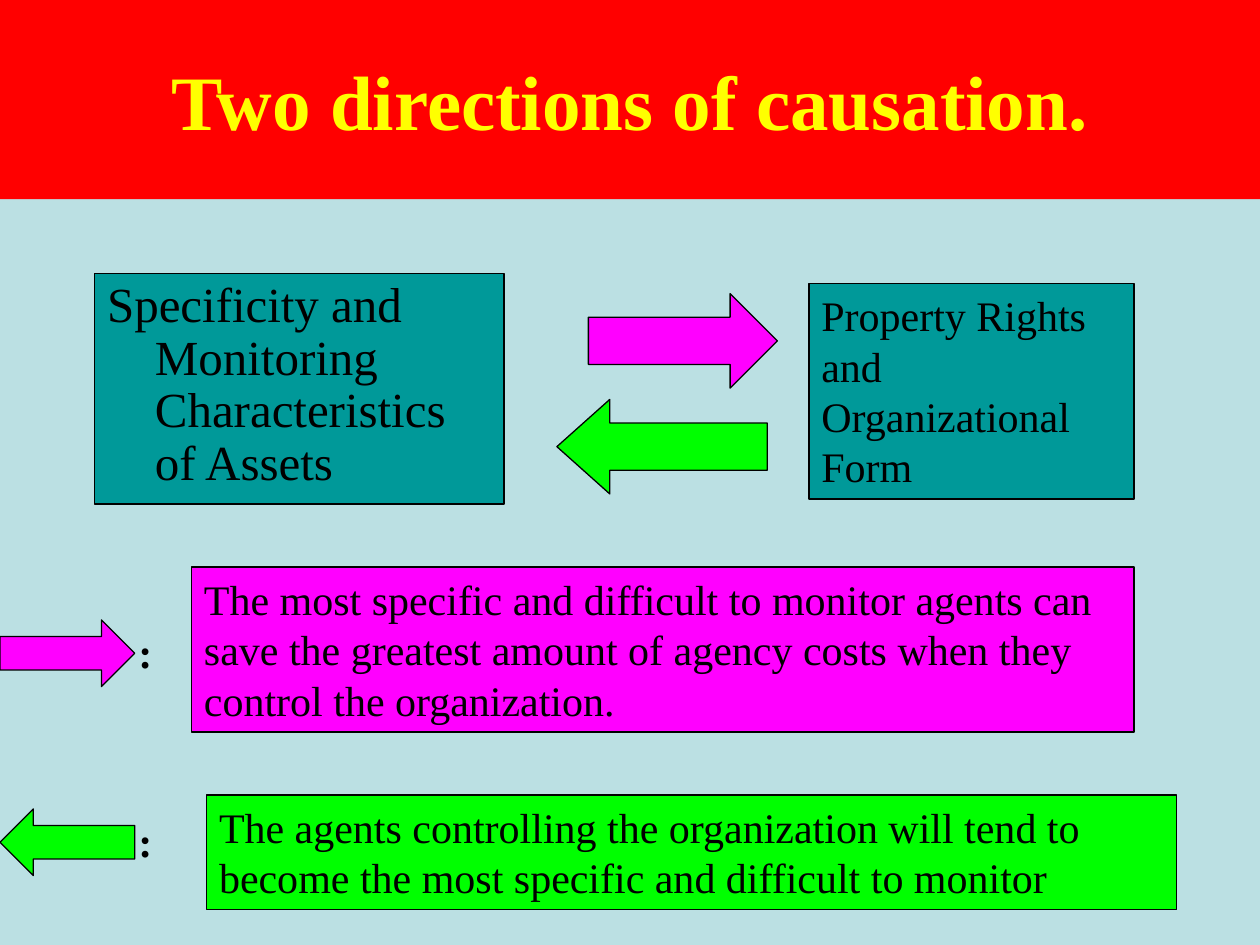
"""Build a slide on the two directions of causation between assets and ownership."""
from dataclasses import dataclass

from pptx import Presentation
from pptx.dml.color import RGBColor
from pptx.enum import shapes, text
from pptx.oxml.ns import qn
from pptx.util import Inches, Pt


@dataclass(frozen=True)
class Theme:
    font: str = "Times New Roman"
    background: str = "BBE0E3"
    banner: str = "FF0000"
    heading: str = "FFFF00"
    ink: str = "000000"
    teal: str = "009999"
    magenta: str = "FF00FF"
    green: str = "00FF00"
    title_size: int = 44
    body_size: int = 28
    note_size: int = 24
    line: float = 0.75


theme = Theme()


def paint(sp, fill, box=None):
    if box:
        sp.left, sp.top, sp.width, sp.height = map(Inches, box)
    sp.fill.solid()
    sp.fill.fore_color.rgb = RGBColor.from_string(fill)
    if fill != theme.banner:
        sp.line.color.rgb = RGBColor.from_string(theme.ink)
        sp.line.width = Pt(theme.line)


def write(sp, lines, size, color=theme.ink, bold=False, align=text.PP_ALIGN.LEFT,
          anchor=text.MSO_ANCHOR.TOP, wrap=True):
    tf = sp.text_frame
    tf.text = "\n".join(lines)
    tf.word_wrap = wrap
    tf.auto_size = text.MSO_AUTO_SIZE.NONE
    tf.vertical_anchor = anchor
    for p in tf.paragraphs:
        p.alignment = align
        p.font.name = theme.font
        p.font.size = Pt(size)
        p.font.bold = bold
        p.font.color.rgb = RGBColor.from_string(color)


prs = Presentation()
prs.slide_width, prs.slide_height = Inches(10), Inches(7.5)
s = prs.slides.add_slide(prs.slide_layouts[1])
s.background.fill.solid()
s.background.fill.fore_color.rgb = RGBColor.from_string(theme.background)

title, body = s.placeholders
paint(title, theme.banner, (0, 0, 10, 1.58))
write(title, ["Two directions of causation."], theme.title_size, theme.heading, True,
      text.PP_ALIGN.CENTER, text.MSO_ANCHOR.MIDDLE)

paint(body, theme.teal, (0.75, 2.17, 3.25, 1.83))
write(body, ["Specificity and Monitoring Characteristics of Assets"], theme.body_size)
p = body.text_frame.paragraphs[0]
p.line_spacing = 0.9
pPr = p._p.get_or_add_pPr()
pPr.set("marL", str(Inches(0.38)))
pPr.set("indent", str(-Inches(0.38)))
pPr.insert_element_before(pPr.makeelement(qn("a:buNone"), {}), "a:tabLst", "a:defRPr", "a:extLst")

right, left = shapes.MSO_SHAPE.RIGHT_ARROW, shapes.MSO_SHAPE.LEFT_ARROW
arrows = [
    (right, theme.magenta, (4.67, 2.33, 1.5, 0.75), 0.5),
    (left, theme.green, (4.42, 3.17, 1.67, 0.75), 0.56),
    (right, theme.magenta, (0, 4.92, 1.07, 0.53), 0.5),
    (left, theme.green, (0, 6.42, 1.07, 0.53), 0.5),
]
for kind, fill, box, head in arrows:
    sp = s.shapes.add_shape(kind, *map(Inches, box))
    sp.shadow.inherit = False
    sp.adjustments[1] = head
    paint(sp, fill)

notes = [
    (theme.teal, (6.42, 2.25, 2.58, 1.71), ["Property Rights and", "Organizational Form"]),
    (theme.magenta, (1.52, 4.5, 7.48, 1.31),
     ["The most specific and difficult to monitor agents can save the greatest amount "
      "of agency costs when they control the organization."]),
    (theme.green, (1.64, 6.31, 7.7, 0.91),
     ["The agents controlling the organization will tend to become the most specific "
      "and difficult to monitor"]),
]
for fill, box, lines in notes:
    sp = s.shapes.add_shape(shapes.MSO_SHAPE.RECTANGLE, *map(Inches, box))
    sp.shadow.inherit = False
    paint(sp, fill)
    write(sp, lines, theme.note_size)

for top in (4.92, 6.42):
    sp = s.shapes.add_textbox(Inches(1), Inches(top), Inches(0.31), Inches(0.5))
    write(sp, [":"], theme.note_size, bold=True, wrap=False)

prs.save("out.pptx")
